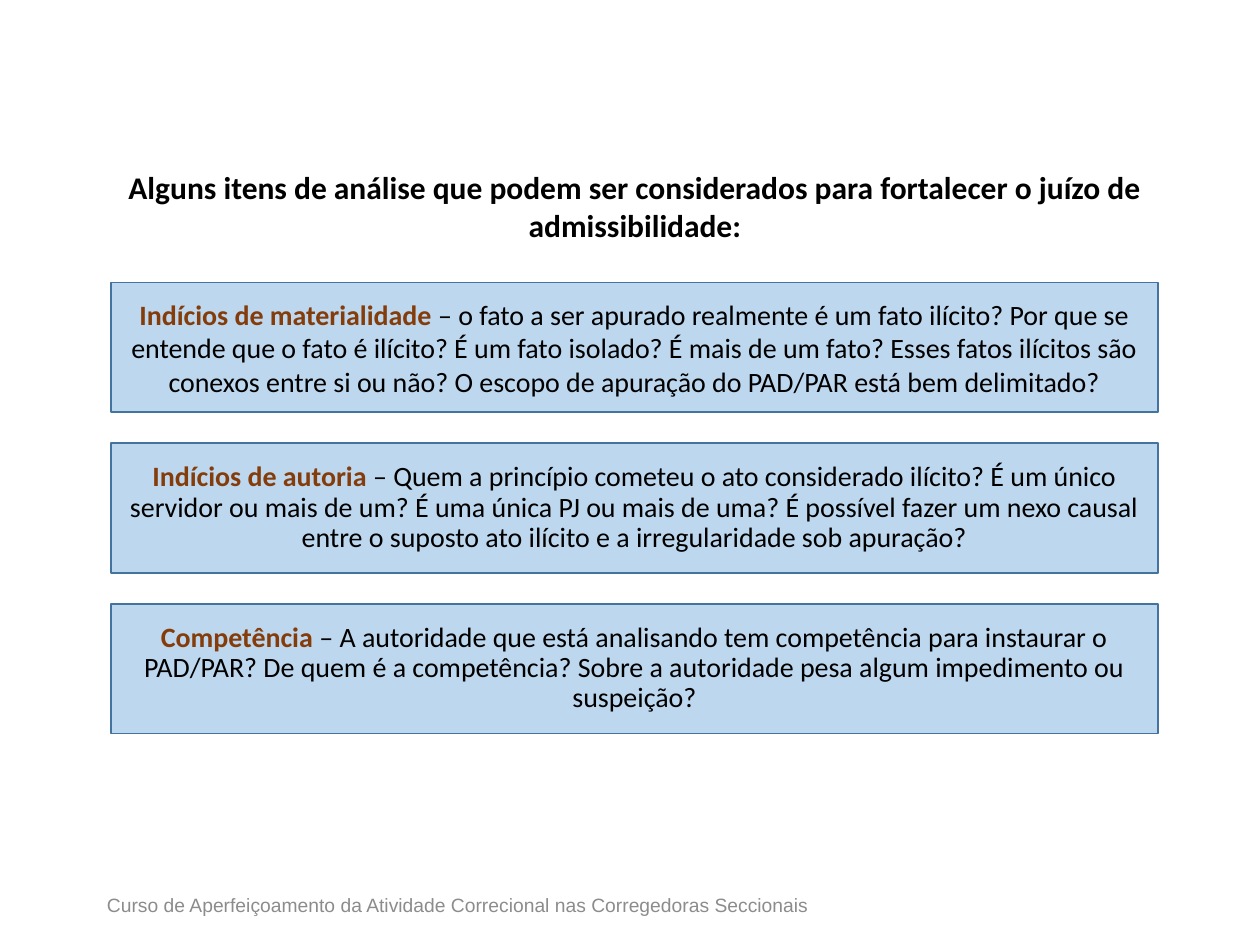
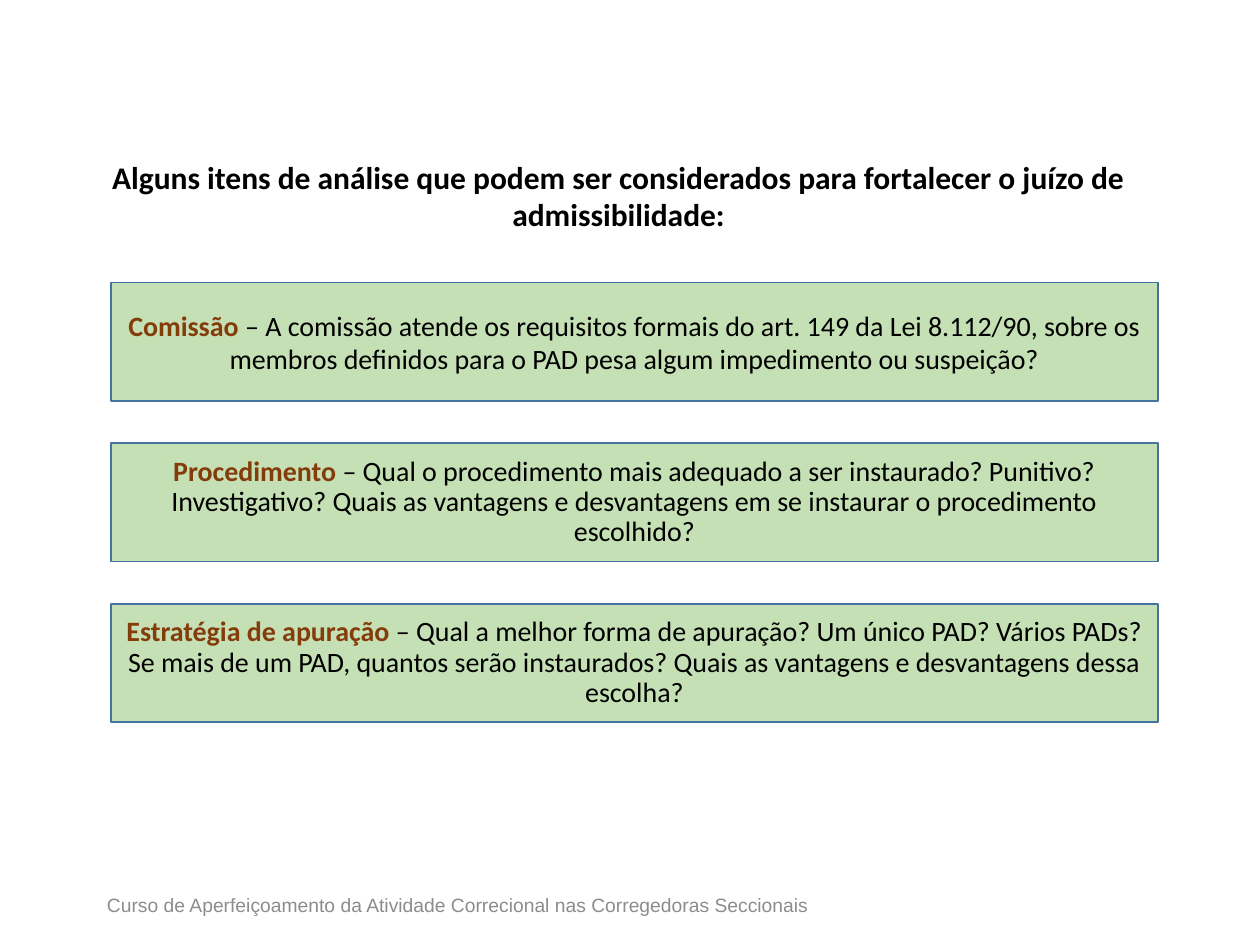
from pptx import Presentation
from pptx import util as u
from pptx.dml.color import RGBColor
from pptx.enum import shapes, text

WIDE, HIGH = 10, 7.5
LEFT, SPAN = 8.8, 83.1
TOP, PITCH = 29.9, 17
HUES = {
    "ink": "000000",
    "term": "843C0B",
    "edge": "43739E",
    "blue": "BDD7EE",
    "green": "C5E0B4",
    "note": "8C8C8C",
}
TITLE = ("Alguns itens de análise que podem ser considerados para "
         "fortalecer o juízo de admissibilidade:")
COURSE = "Curso de Aperfeiçoamento da Atividade Correcional nas Corregedoras Seccionais"
PAGES = [
    {"title": (5.8, 17.15), "fill": "blue", "tall": 13.73, "items": [
        ("Indícios de materialidade",
         "o fato a ser apurado realmente é um fato ilícito? Por que se entende que o "
         "fato é ilícito? É um fato isolado? É mais de um fato? Esses fatos ilícitos "
         "são conexos entre si ou não? O escopo de apuração do PAD/PAR está bem "
         "delimitado?"),
        ("Indícios de autoria",
         "Quem a princípio cometeu o ato considerado ilícito? É um único servidor ou "
         "mais de um? É uma única PJ ou mais de uma? É possível fazer um nexo causal "
         "entre o suposto ato ilícito e a irregularidade sob apuração?"),
        ("Competência",
         "A autoridade que está analisando tem competência para instaurar o PAD/PAR? "
         "De quem é a competência? Sobre a autoridade pesa algum impedimento ou "
         "suspeição?"),
    ]},
    {"title": (4.5, 16), "fill": "green", "tall": 12.53, "items": [
        ("Comissão",
         "A comissão atende os requisitos formais do art. 149 da Lei 8.112/90, sobre "
         "os membros definidos para o PAD pesa algum impedimento ou suspeição?"),
        ("Procedimento",
         "Qual o procedimento mais adequado a ser instaurado? Punitivo? Investigativo? "
         "Quais as vantagens e desvantagens em se instaurar o procedimento escolhido?"),
        ("Estratégia de apuração",
         "Qual a melhor forma de apuração? Um único PAD? Vários PADs? Se mais de um "
         "PAD, quantos serão instaurados? Quais as vantagens e desvantagens dessa "
         "escolha?"),
    ]},
]


def frame(left, top, wide, tall):
    """Turn percentages of the slide into lengths."""
    return [u.Inches(share * size / 100)
            for share, size in zip((left, top, wide, tall), (WIDE, HIGH) * 2)]


def tint(name):
    """Return a named colour."""
    return RGBColor.from_string(HUES[name])


def style(run, size, hue, bold=False, face="Calibri"):
    """Format one run."""
    run.font.size = u.Pt(size)
    run.font.color.rgb = tint(hue)
    run.font.bold = bold
    run.font.name = face


def write(shape, words, align, anchor, **look):
    """Fill a shape with one formatted paragraph."""
    body = shape.text_frame
    body.text = words
    body.word_wrap = True
    body.vertical_anchor = anchor
    body.auto_size = text.MSO_AUTO_SIZE.NONE
    para = body.paragraphs[0]
    para.alignment = align
    style(para.runs[0], **look)


def head(slide, left, top):
    """Place and format the title."""
    title = slide.shapes.title
    title.left, title.top, title.width, title.height = frame(left, top, 89.2, 9.47)
    write(title, TITLE, text.PP_ALIGN.CENTER, text.MSO_ANCHOR.TOP,
          size=18, hue="ink", bold=True)


def foot(slide):
    """Add the course name."""
    course = slide.shapes.add_textbox(*frame(7.5, 92.53, 86.2, 6.4))
    write(course, COURSE, text.PP_ALIGN.LEFT, text.MSO_ANCHOR.MIDDLE,
          size=11, hue="note", face="Arial")


def card(slide, row, tall, fill, term, query):
    """Add a box with a bold term and its questions."""
    box = slide.shapes.add_shape(shapes.MSO_SHAPE.RECTANGLE,
                                 *frame(LEFT, TOP + row * PITCH, SPAN, tall))
    box.shadow.inherit = False
    box.fill.solid()
    box.fill.fore_color.rgb = tint(fill)
    box.line.color.rgb = tint("edge")
    box.line.width = u.Pt(1)
    write(box, term, text.PP_ALIGN.CENTER, text.MSO_ANCHOR.MIDDLE,
          size=16, hue="term", bold=True)
    para = box.text_frame.paragraphs[0]
    para.line_spacing = 0.9 if row else 1.0
    rest = para.add_run()
    rest.text = f" – {query}"
    style(rest, 16, "ink")


def main():
    """Build and save the slides."""
    deck = Presentation()
    deck.slide_width, deck.slide_height = u.Inches(WIDE), u.Inches(HIGH)
    for page in PAGES:
        slide = deck.slides.add_slide(deck.slide_layouts.get_by_name("Title Only"))
        foot(slide)
        head(slide, *page["title"])
        for row, (term, query) in enumerate(page["items"]):
            card(slide, row, page["tall"], page["fill"], term, query)
    deck.save("out.pptx")


if __name__ == "__main__":
    main()
